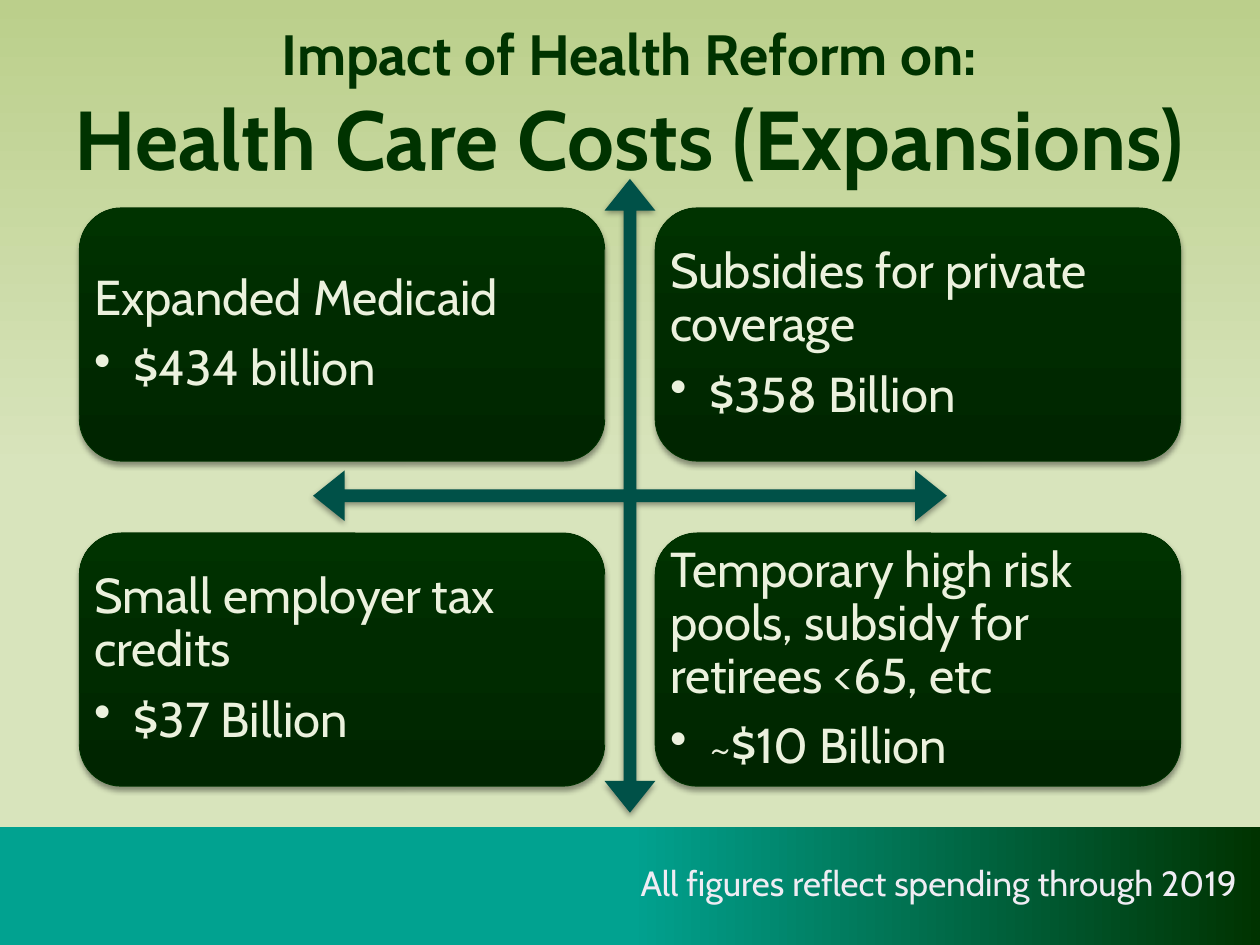
from dataclasses import dataclass

from lxml.etree import SubElement
from pptx import Presentation
from pptx.dml.color import RGBColor
from pptx.enum.shapes import MSO_SHAPE
from pptx.enum.text import MSO_ANCHOR, PP_ALIGN
from pptx.oxml.ns import qn
from pptx.util import Inches, Pt

WIDTH, HEIGHT = 10, 7.5


@dataclass(frozen=True)
class Theme:
    font: str = "Cabin"
    dark: str = "003300"
    outline: str = "003200"
    arrow: str = "005148"
    card_text: str = "EBF1DD"
    footer_text: str = "EFECF3"
    background: tuple = ((0, "BBCF8B"), (50, "D8E4BC"), (100, "D8E4BC"))
    footer: tuple = ((27, "01A290"), (50, "01A290"), (100, "003300"))
    card: tuple = ((0, "002500"), (55, "002B00"), (100, "003300"))
    lead_size: float = 32.4
    title_size: float = 47.7
    card_size: float = 28
    footer_size: float = 20


@dataclass(frozen=True)
class Box:
    left: float
    top: float
    width: float
    height: float

    def lengths(self) -> list:
        return [Inches(value) for value in (self.left, self.top, self.width, self.height)]


@dataclass(frozen=True)
class Card:
    column: int
    row: int
    heading: str
    amount: str


THEME = Theme()
CARD_WIDTH, CARD_HEIGHT = 4.17, 2.01
GRID_LEFT, GRID_TOP = 0.63, 1.65
COLUMN_STEP, ROW_STEP = 4.57, 2.58
ARROW_SIZE = 5.03
FOOTER_HEIGHT = HEIGHT / 8

CARDS = (
    Card(0, 0, "Expanded Medicaid", "$434 billion"),
    Card(1, 0, "Subsidies for private coverage", "$358 Billion"),
    Card(0, 1, "Small employer tax credits", "$37 Billion"),
    Card(1, 1, "Temporary high risk pools, subsidy for retirees <65, etc", "~$10 Billion"),
)


def set_gradient(fill, owner, stops: tuple, angle: int) -> None:
    """Fill with any number of stops; the angle runs clockwise in degrees."""
    fill.gradient()
    gradient = next(owner.iter(qn("a:gradFill")))
    for child in list(gradient):
        gradient.remove(child)
    stop_list = SubElement(gradient, qn("a:gsLst"))
    for position, color in stops:
        stop = SubElement(stop_list, qn("a:gs"), pos=str(position * 1000))
        SubElement(stop, qn("a:srgbClr"), val=color)
    SubElement(gradient, qn("a:lin"), ang=str(angle * 60000), scaled="0")


def add_shadow(shape) -> None:
    effects = shape._element.spPr.find(qn("a:effectLst"))
    shadow = SubElement(effects, qn("a:outerShdw"), blurRad=str(Pt(3.1)), dist=str(Pt(2)),
                        dir="5400000", rotWithShape="0")
    color = SubElement(shadow, qn("a:srgbClr"), val="000000")
    SubElement(color, qn("a:alpha"), val="38000")


def add_plain_shape(slide, kind: MSO_SHAPE, box: Box):
    shape = slide.shapes.add_shape(kind, *box.lengths())
    shape.shadow.inherit = False
    shape.line.fill.background()
    return shape


def add_text_box(slide, box: Box, anchor: MSO_ANCHOR = MSO_ANCHOR.TOP, wrap: bool = True):
    frame = slide.shapes.add_textbox(*box.lengths()).text_frame
    frame.word_wrap = wrap
    frame.vertical_anchor = anchor
    return frame


def write(paragraph, text: str, *, size: float, color: str, bold: bool = False,
          align: PP_ALIGN = PP_ALIGN.LEFT, line_spacing: float = 1, space_after: float = 0) -> None:
    paragraph.alignment = align
    paragraph.line_spacing = line_spacing
    paragraph.space_after = Pt(space_after)
    run = paragraph.add_run()
    run.text = text
    run.font.name = THEME.font
    run.font.size = Pt(size)
    run.font.bold = bold
    run.font.color.rgb = RGBColor.from_string(color)


def add_bullet(paragraph) -> None:
    properties = paragraph._p.get_or_add_pPr()
    properties.set("marL", str(Inches(0.31)))
    properties.set("indent", str(Inches(-0.31)))
    SubElement(properties, qn("a:buChar"), char="•")


def add_card(slide, card: Card) -> None:
    box = Box(GRID_LEFT + card.column * COLUMN_STEP, GRID_TOP + card.row * ROW_STEP,
              CARD_WIDTH, CARD_HEIGHT)
    shape = add_plain_shape(slide, MSO_SHAPE.ROUNDED_RECTANGLE, box)
    set_gradient(shape.fill, shape._element.spPr, THEME.card, 270)
    shape.line.color.rgb = RGBColor.from_string(THEME.outline)
    shape.line.width = Pt(0.5)
    add_shadow(shape)

    frame = shape.text_frame
    frame.word_wrap = True
    frame.vertical_anchor = MSO_ANCHOR.MIDDLE
    # The rounded corners already push the text inwards.
    frame.margin_left = frame.margin_right = Inches(0.02)
    frame.margin_top = frame.margin_bottom = Inches(0.02)
    style = dict(size=THEME.card_size, color=THEME.card_text, line_spacing=0.9)
    write(frame.paragraphs[0], card.heading, space_after=10, **style)
    amount = frame.add_paragraph()
    amount.level = 1
    add_bullet(amount)
    write(amount, card.amount, space_after=4, **style)


def add_title(slide) -> None:
    frame = add_text_box(slide, Box(0.39, 0.19, 9.21, 1.25), MSO_ANCHOR.MIDDLE)
    paragraph = frame.paragraphs[0]
    style = dict(color=THEME.dark, bold=True, align=PP_ALIGN.CENTER)
    write(paragraph, "Impact of Health Reform on:", size=THEME.lead_size, **style)
    paragraph.add_line_break()
    write(paragraph, "Health Care Costs (Expansions)", size=THEME.title_size, **style)


def add_cross_arrow(slide) -> None:
    box = Box((WIDTH - ARROW_SIZE) / 2, 1.42, ARROW_SIZE, ARROW_SIZE)
    arrow = add_plain_shape(slide, MSO_SHAPE.QUAD_ARROW, box)
    for index, share in enumerate((0.02, 0.04, 0.05)):
        arrow.adjustments[index] = share
    arrow.fill.solid()
    arrow.fill.fore_color.rgb = RGBColor.from_string(THEME.arrow)
    add_shadow(arrow)


def add_footer_band(slide) -> None:
    band = add_plain_shape(slide, MSO_SHAPE.RECTANGLE,
                           Box(0, HEIGHT - FOOTER_HEIGHT, WIDTH, FOOTER_HEIGHT))
    set_gradient(band.fill, band._element.spPr, THEME.footer, 0)


def main() -> None:
    presentation = Presentation()
    presentation.slide_width, presentation.slide_height = Inches(WIDTH), Inches(HEIGHT)
    slide = presentation.slides.add_slide(presentation.slide_layouts[6])
    set_gradient(slide.background.fill, slide._element, THEME.background, 90)
    add_footer_band(slide)
    add_title(slide)
    add_cross_arrow(slide)
    for card in CARDS:
        add_card(slide, card)
    footnote = add_text_box(slide, Box(4.8, 6.79, 5.12, 0.44), wrap=False)
    write(footnote.paragraphs[0], "All figures reflect spending through 2019",
          size=THEME.footer_size, color=THEME.footer_text, align=PP_ALIGN.RIGHT)
    presentation.save("out.pptx")


if __name__ == "__main__":
    main()
